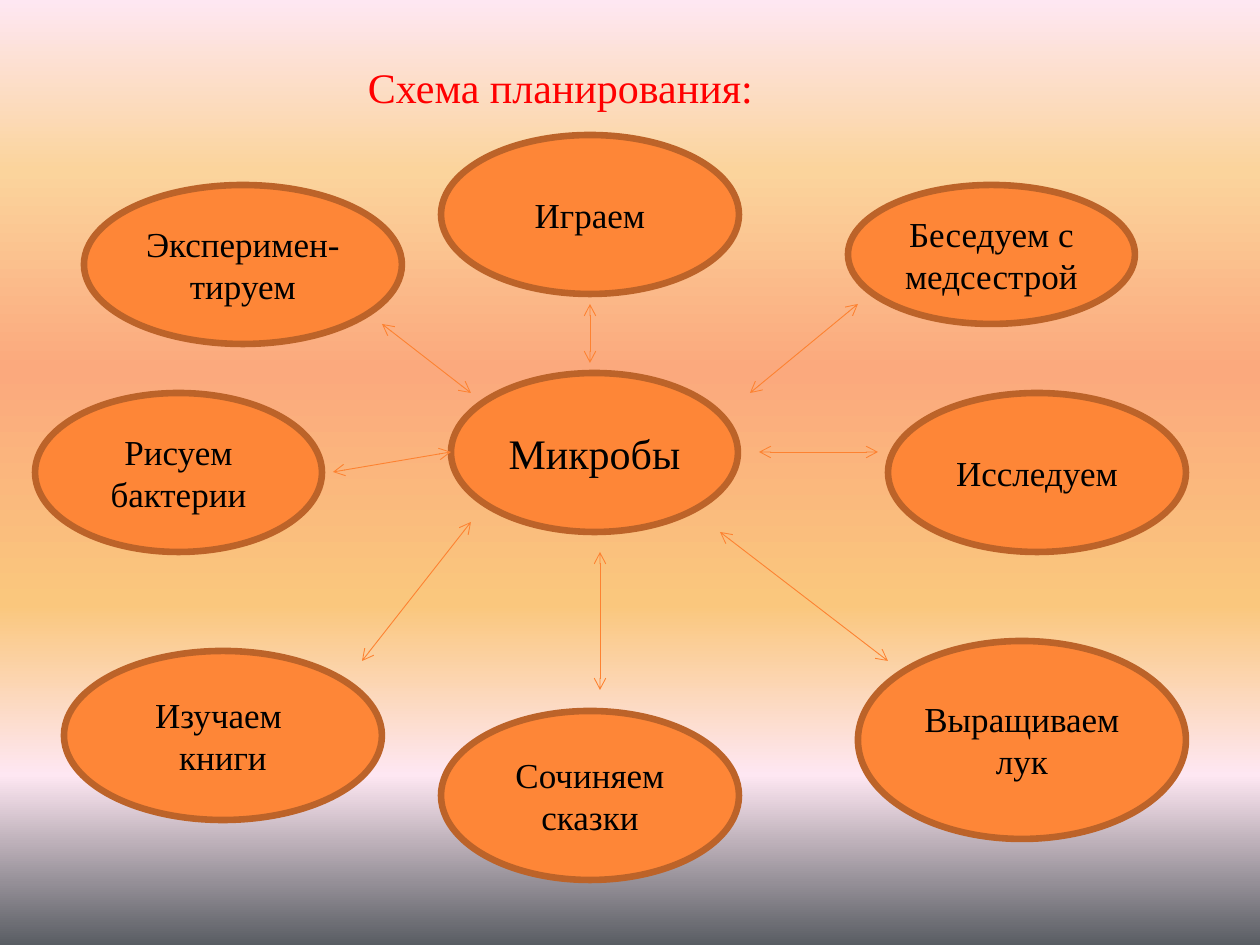
from dataclasses import dataclass
from pptx import Presentation
from pptx.dml.color import RGBColor
from pptx.enum.shapes import MSO_CONNECTOR, MSO_SHAPE
from pptx.enum.text import MSO_ANCHOR, MSO_AUTO_SIZE, PP_ALIGN
from pptx.oxml.ns import qn
from pptx.util import Pt
from lxml.etree import SubElement

PX = 914400 // 126


@dataclass(frozen=True)
class Theme:
    font: str = "Times New Roman"
    big: int = 24
    small: int = 20
    title: str = "FF0000"
    text: str = "000000"
    fill: str = "FE8637"
    outline: str = "BC6329"
    arrow: str = "FD8231"
    # percent from the bottom edge up, colour
    background: tuple = ((0, "595D63"), (18, "FEE7F2"), (36, "FAC77D"),
                         (61, "FBA97D"), (82, "FBD49C"), (100, "FEE7F2"))


THEME = Theme()

TITLE = ("Схема планирования:", (353, 55, 415, 63))
CENTER = ("Микробы", (451, 373, 287, 159))
# text, (left, top, width, height)
ACTIVITIES = [
    ("Играем", (441, 135, 298, 159)),
    ("Беседуем с медсестрой", (848, 185, 287, 139)),
    ("Исследуем", (888, 393, 298, 159)),
    ("Выращиваем лук", (858, 641, 328, 198)),
    ("Сочиняем сказки", (441, 711, 298, 169)),
    ("Эксперимен-тируем", (84, 185, 318, 159)),
    ("Рисуем бактерии", (35, 393, 287, 159)),
    ("Изучаем \nкниги", (64, 651, 318, 169)),
]
# from x, y, to x, y
ARROWS = [
    (382, 324, 471, 393), (333, 472, 451, 452), (362, 661, 471, 522),
    (600, 552, 600, 690), (858, 304, 750, 393), (759, 452, 878, 452),
    (720, 532, 888, 661), (590, 304, 590, 363),
]


def px(values):
    return [v * PX for v in values]


def rgb(value):
    return RGBColor.from_string(value)


def set_background(slide):
    fill = slide.background.fill
    fill.gradient()
    fill.gradient_angle = 90
    stops = slide.background._cSld.find(".//" + qn("a:gsLst"))
    for old in list(stops):
        stops.remove(old)
    for percent, color in THEME.background:
        stop = SubElement(stops, qn("a:gs"), pos=str(percent * 1000))
        SubElement(stop, qn("a:srgbClr"), val=color)


def write(tf, text, size, color):
    tf.text = text
    for p in tf.paragraphs:
        p.alignment = PP_ALIGN.CENTER
        p.font.name = THEME.font
        p.font.size = Pt(size)
        p.font.color.rgb = rgb(color)


def add_title(slide, text, box):
    tf = slide.shapes.add_textbox(*px(box)).text_frame
    tf.word_wrap = False
    tf.auto_size = MSO_AUTO_SIZE.SHAPE_TO_FIT_TEXT
    write(tf, text, THEME.big, THEME.title)


def add_ellipse(slide, text, box, size):
    sp = slide.shapes.add_shape(MSO_SHAPE.OVAL, *px(box))
    sp.shadow.inherit = False
    sp.fill.solid()
    sp.fill.fore_color.rgb = rgb(THEME.fill)
    sp.line.color.rgb = rgb(THEME.outline)
    sp.line.width = Pt(3.78)
    tf = sp.text_frame
    tf.word_wrap = True
    tf.vertical_anchor = MSO_ANCHOR.MIDDLE
    write(tf, text, size, THEME.text)


def add_arrow(slide, ends):
    """Add a thin line with an open arrowhead at both ends."""
    cxn = slide.shapes.add_connector(MSO_CONNECTOR.STRAIGHT, *px(ends))
    cxn.line.color.rgb = rgb(THEME.arrow)
    cxn.line.width = Pt(0.5)
    ln = cxn.line._get_or_add_ln()
    for end in ("a:headEnd", "a:tailEnd"):
        SubElement(ln, qn(end), type="arrow")
    SubElement(cxn._element.spPr, qn("a:effectLst"))


def main():
    prs = Presentation()
    prs.slide_width, prs.slide_height = px((1260, 945))
    slide = prs.slides.add_slide(prs.slide_layouts[6])
    set_background(slide)
    add_title(slide, *TITLE)
    add_ellipse(slide, *CENTER, THEME.big)
    for text, box in ACTIVITIES:
        add_ellipse(slide, text, box, THEME.small)
    for ends in ARROWS:
        add_arrow(slide, ends)
    prs.save("out.pptx")


if __name__ == "__main__":
    main()
